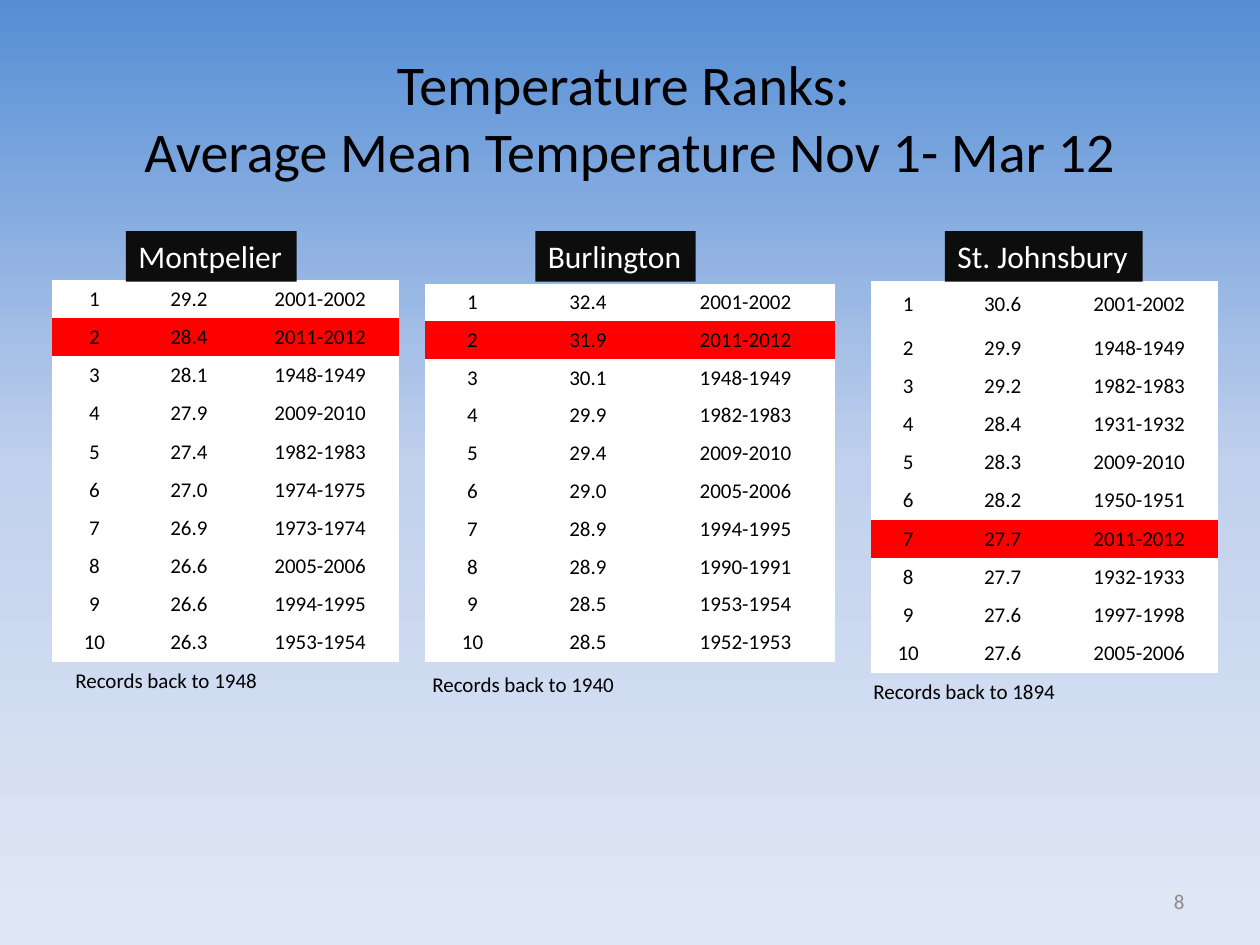
from copy import deepcopy

from pptx import Presentation
from pptx.dml.color import RGBColor
from pptx.enum.shapes import MSO_SHAPE
from pptx.enum.text import MSO_ANCHOR, MSO_AUTO_SIZE, PP_ALIGN
from pptx.oxml.ns import qn
from pptx.util import Pt

CENTER, LEFT, RIGHT = PP_ALIGN.CENTER, PP_ALIGN.LEFT, PP_ALIGN.RIGHT
MIDDLE, TOP = MSO_ANCHOR.MIDDLE, MSO_ANCHOR.TOP
NO_GRID_STYLE = "{2D5ABB26-0587-4C30-8999-92F81FD0307C}"

FONT = "Calibri"
BLACK, WHITE, RED, LABEL, GRAY = "000000", "FFFFFF", "FF0000", "0D0D0D", "8C8C8C"
BACKGROUND = [(0, "558ED5"), (0.5, "C2D1ED"), (1, "E1E8F5")]
TITLE = "Temperature Ranks: \vAverage Mean Temperature Nov 1- Mar 12"
CURRENT_SEASON = "2011-2012"
LABEL_TOP, LABEL_HEIGHT = 132, 29

# Lengths in points; label is (left, width), note is (left, top).
STATIONS = [
    dict(name="Montpelier", since=1948, left=30, top=160, columns=(48, 60, 90),
         first_row=21.85, row=21.85, label=(72, 97.5), note=(36, 378),
         ranks=[("29.2", "2001-2002"), ("28.4", "2011-2012"), ("28.1", "1948-1949"),
                ("27.9", "2009-2010"), ("27.4", "1982-1983"), ("27.0", "1974-1975"),
                ("26.9", "1973-1974"), ("26.6", "2005-2006"), ("26.6", "1994-1995"),
                ("26.3", "1953-1954")]),
    dict(name="Burlington", since=1940, left=243, top=162, columns=(54, 78, 102),
         first_row=21.6, row=21.6, label=(306, 91.5), note=(240, 380),
         ranks=[("32.4", "2001-2002"), ("31.9", "2011-2012"), ("30.1", "1948-1949"),
                ("29.9", "1982-1983"), ("29.4", "2009-2010"), ("29.0", "2005-2006"),
                ("28.9", "1994-1995"), ("28.9", "1990-1991"), ("28.5", "1953-1954"),
                ("28.5", "1952-1953")]),
    dict(name="St. Johnsbury", since=1894, left=498, top=160.5, columns=(42, 66, 90),
         first_row=27.4, row=21.85, label=(540, 113), note=(492, 384),
         ranks=[("30.6", "2001-2002"), ("29.9", "1948-1949"), ("29.2", "1982-1983"),
                ("28.4", "1931-1932"), ("28.3", "2009-2010"), ("28.2", "1950-1951"),
                ("27.7", "2011-2012"), ("27.7", "1932-1933"), ("27.6", "1997-1998"),
                ("27.6", "2005-2006")]),
]


def rgb(value):
    return RGBColor.from_string(value)


def write(tf, text, size, color, align=LEFT):
    tf.text = text
    p = tf.paragraphs[0]
    p.alignment = align
    p.font.name, p.font.size = FONT, Pt(size)
    p.font.color.rgb = rgb(color)


def fit_to_text(tf):
    tf.word_wrap = False
    tf.auto_size = MSO_AUTO_SIZE.SHAPE_TO_FIT_TEXT
    tf.vertical_anchor = TOP


def paint_background(s):
    fill = s.background.fill
    fill.gradient()
    fill.gradient_angle = 270
    stops = s.element.find(".//" + qn("a:gsLst"))
    stops.insert(1, deepcopy(stops[0]))
    for stop, (position, color) in zip(fill.gradient_stops, BACKGROUND):
        stop.position = position
        stop.color.rgb = rgb(color)


def add_ranks(s, station):
    ranks, columns = station["ranks"], station["columns"]
    heights = [station["first_row"]] + [station["row"]] * (len(ranks) - 1)
    frame = s.shapes.add_table(len(ranks), len(columns), Pt(station["left"]),
                               Pt(station["top"]), Pt(sum(columns)), Pt(sum(heights)))
    table = frame.table
    table.first_row = table.horz_banding = False
    frame.element.find(".//" + qn("a:tableStyleId")).text = NO_GRID_STYLE
    for column, width in zip(table.columns, columns):
        column.width = Pt(width)
    for rank, (row, height, (mean, season)) in enumerate(zip(table.rows, heights, ranks), 1):
        row.height = Pt(height)
        for cell, text in zip(row.cells, (str(rank), mean, season)):
            cell.fill.solid()
            cell.fill.fore_color.rgb = rgb(RED if season == CURRENT_SEASON else WHITE)
            cell.vertical_anchor = MIDDLE
            cell.margin_top = cell.margin_bottom = Pt(3)
            write(cell.text_frame, text, 12, BLACK, CENTER)


def add_label(s, station):
    left, width = station["label"]
    sp = s.shapes.add_shape(MSO_SHAPE.RECTANGLE, Pt(left), Pt(LABEL_TOP),
                            Pt(width), Pt(LABEL_HEIGHT))
    sp.shadow.inherit = False
    sp.fill.solid()
    sp.fill.fore_color.rgb = rgb(LABEL)
    sp.line.fill.background()
    write(sp.text_frame, station["name"], 18, WHITE)
    fit_to_text(sp.text_frame)


def add_note(s, station):
    left, top = station["note"]
    tf = s.shapes.add_textbox(Pt(left), Pt(top), Pt(119.5), Pt(21.8)).text_frame
    write(tf, f"Records back to {station['since']}", 12, BLACK)
    fit_to_text(tf)


def main():
    prs = Presentation()
    prs.slide_width, prs.slide_height = Pt(720), Pt(540)
    s = prs.slides.add_slide(prs.slide_layouts[5])
    paint_background(s)

    title = s.shapes.title
    title.left, title.top, title.width, title.height = Pt(36), Pt(21.6), Pt(648), Pt(90)
    title.text_frame.vertical_anchor = MIDDLE
    write(title.text_frame, TITLE, 32, BLACK, CENTER)

    for add_part in (add_ranks, add_note, add_label):
        for station in STATIONS:
            add_part(s, station)

    number = s.shapes.add_textbox(Pt(516), Pt(500.5), Pt(168), Pt(28.75)).text_frame
    number.word_wrap = True
    number.vertical_anchor = MIDDLE
    write(number, "8", 12, GRAY, RIGHT)
    prs.save("out.pptx")


if __name__ == "__main__":
    main()
